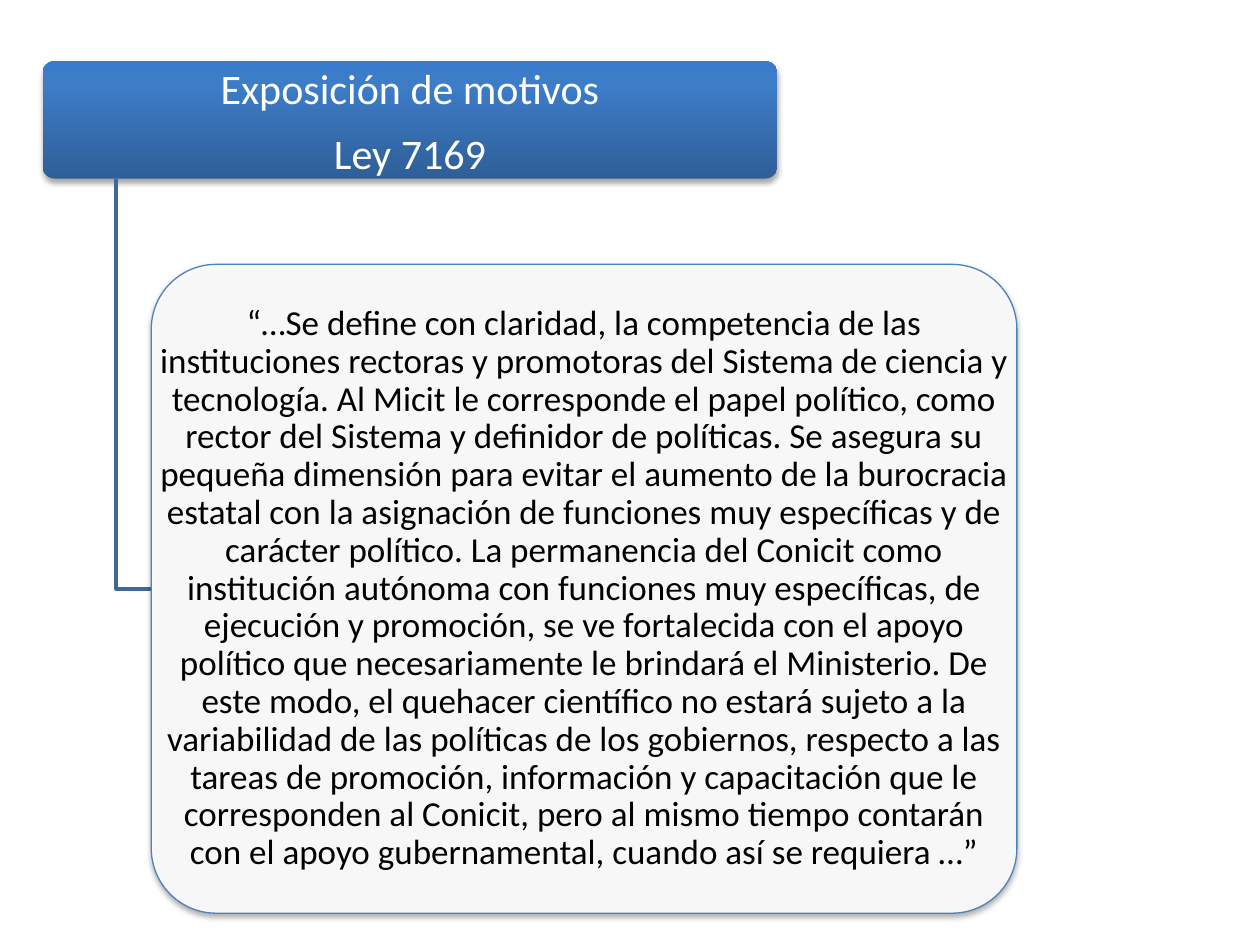
from copy import deepcopy

from lxml import etree
from pptx import Presentation
from pptx.dml.color import RGBColor
from pptx.enum.shapes import MSO_SHAPE
from pptx.enum.text import MSO_ANCHOR, PP_ALIGN
from pptx.oxml.ns import qn
from pptx.util import Cm, Pt

ROUNDED = MSO_SHAPE.ROUNDED_RECTANGLE
MIDDLE = MSO_ANCHOR.MIDDLE
CENTER = PP_ALIGN.CENTER

WHITE = RGBColor(0xFF, 0xFF, 0xFF)
BLACK = RGBColor(0x00, 0x00, 0x00)
BORDER_BLUE = RGBColor(0x4F, 0x81, 0xBD)
BRANCH_BLUE = RGBColor(0x3F, 0x67, 0x97)
HEADING_STOPS = (
    (0, RGBColor(0x2F, 0x5F, 0x99)),
    (0.8, RGBColor(0x3D, 0x7C, 0xC7)),
    (1, RGBColor(0x3A, 0x7C, 0xCB)),
)

HEADING_AREA = (Cm(0.86), Cm(1.24), Cm(14.81), Cm(2.36))
QUOTE_AREA = (Cm(3.05), Cm(5.33), Cm(17.45), Cm(13.08))
BRANCH_X = Cm(2.34)

HEADING = ("Exposición de motivos", "Ley 7169")
QUOTE_SENTENCES = (
    "“…Se define con claridad, la competencia de las instituciones rectoras y "
    "promotoras del Sistema de ciencia y tecnología.",
    "Al Micit le corresponde el papel político, como rector del Sistema y "
    "definidor de políticas.",
    "Se asegura su pequeña dimensión para evitar el aumento de la burocracia "
    "estatal con la asignación de funciones muy específicas y de carácter "
    "político.",
    "La permanencia del Conicit como institución autónoma con funciones muy "
    "específicas, de ejecución y promoción, se ve fortalecida con el apoyo "
    "político que necesariamente le brindará el Ministerio.",
    "De este modo, el quehacer científico no estará sujeto a la variabilidad "
    "de las políticas de los gobiernos, respecto a las tareas de promoción, "
    "información y capacitación que le corresponden al Conicit, pero al mismo "
    "tiempo contarán con el apoyo gubernamental, cuando así se requiera …”",
)


def apply_format(target, values):
    """Set each named attribute on the target."""
    for name, value in values.items():
        setattr(target, name, value)


def set_alpha(color, percent):
    """Give a colour element an opacity."""
    etree.SubElement(color, qn("a:alpha"), val=str(percent * 1000))


def add_card(slide, area):
    """Add a rounded card with a soft shadow below it."""
    card = slide.shapes.add_shape(ROUNDED, *area)
    card.adjustments[0] = 0.1
    card.shadow.inherit = False
    effects = card._element.spPr.find(qn("a:effectLst"))
    shadow = etree.SubElement(
        effects, qn("a:outerShdw"), blurRad=str(Pt(3.1)), dist=str(Pt(1.8)),
        dir="5400000", rotWithShape="0")
    set_alpha(etree.SubElement(shadow, qn("a:srgbClr"), val=str(BLACK)), 35)
    return card


def fill_heading(card):
    """Fill the heading card with its upward gradient."""
    card.line.fill.background()
    card.fill.gradient()
    card.fill.gradient_angle = 90
    stop_list = card._element.spPr.find(qn("a:gradFill")).find(qn("a:gsLst"))
    stop_list.insert(1, deepcopy(stop_list[0]))
    for stop, (position, color) in zip(card.fill.gradient_stops, HEADING_STOPS):
        stop.position = position
        stop.color.rgb = color


def fill_quote(card):
    """Give the quote card a translucent fill and a thin border."""
    card.fill.solid()
    card.fill.fore_color.rgb = WHITE
    set_alpha(card._element.spPr.find(qn("a:solidFill"))[0], 90)
    card.line.color.rgb = BORDER_BLUE
    card.line.width = Pt(0.75)


def add_label(slide, area, lines, size, color, side_margin, line_spacing):
    """Add centred paragraphs over a card."""
    frame = slide.shapes.add_textbox(*area).text_frame
    apply_format(frame, {
        "word_wrap": True, "vertical_anchor": MIDDLE,
        "margin_left": side_margin, "margin_right": side_margin,
        "margin_top": Cm(0.08), "margin_bottom": Cm(0.08),
    })
    frame.text = "\n".join(lines)
    for paragraph in frame.paragraphs:
        apply_format(paragraph, {
            "alignment": CENTER, "line_spacing": line_spacing,
            "space_after": Pt(size * 0.35),
        })
        apply_format(paragraph.font, {"name": "Calibri", "size": Pt(size)})
        paragraph.font.color.rgb = color


def add_branch(slide):
    """Draw the elbow from the heading to the middle of the quote."""
    heading_bottom = HEADING_AREA[1] + HEADING_AREA[3]
    quote_middle = QUOTE_AREA[1] + QUOTE_AREA[3] // 2
    builder = slide.shapes.build_freeform(BRANCH_X, heading_bottom)
    builder.add_line_segments(
        [(BRANCH_X, quote_middle), (QUOTE_AREA[0], quote_middle)], close=False)
    branch = builder.convert_to_shape()
    branch.shadow.inherit = False
    branch.fill.background()
    branch.line.color.rgb = BRANCH_BLUE
    branch.line.width = Pt(2)


def main():
    """Build the slide and save it."""
    deck = Presentation()
    apply_format(deck, {"slide_width": Cm(25.4), "slide_height": Cm(19.05)})
    slide = deck.slides.add_slide(deck.slide_layouts[6])
    fill_heading(add_card(slide, HEADING_AREA))
    add_label(slide, HEADING_AREA, HEADING, 24, WHITE, Cm(0.13), 1.0)
    add_branch(slide)
    fill_quote(add_card(slide, QUOTE_AREA))
    quote = " ".join(QUOTE_SENTENCES)
    add_label(slide, QUOTE_AREA, [quote], 20, BLACK, Cm(0.1), 0.9)
    deck.save("out.pptx")


if __name__ == "__main__":
    main()
